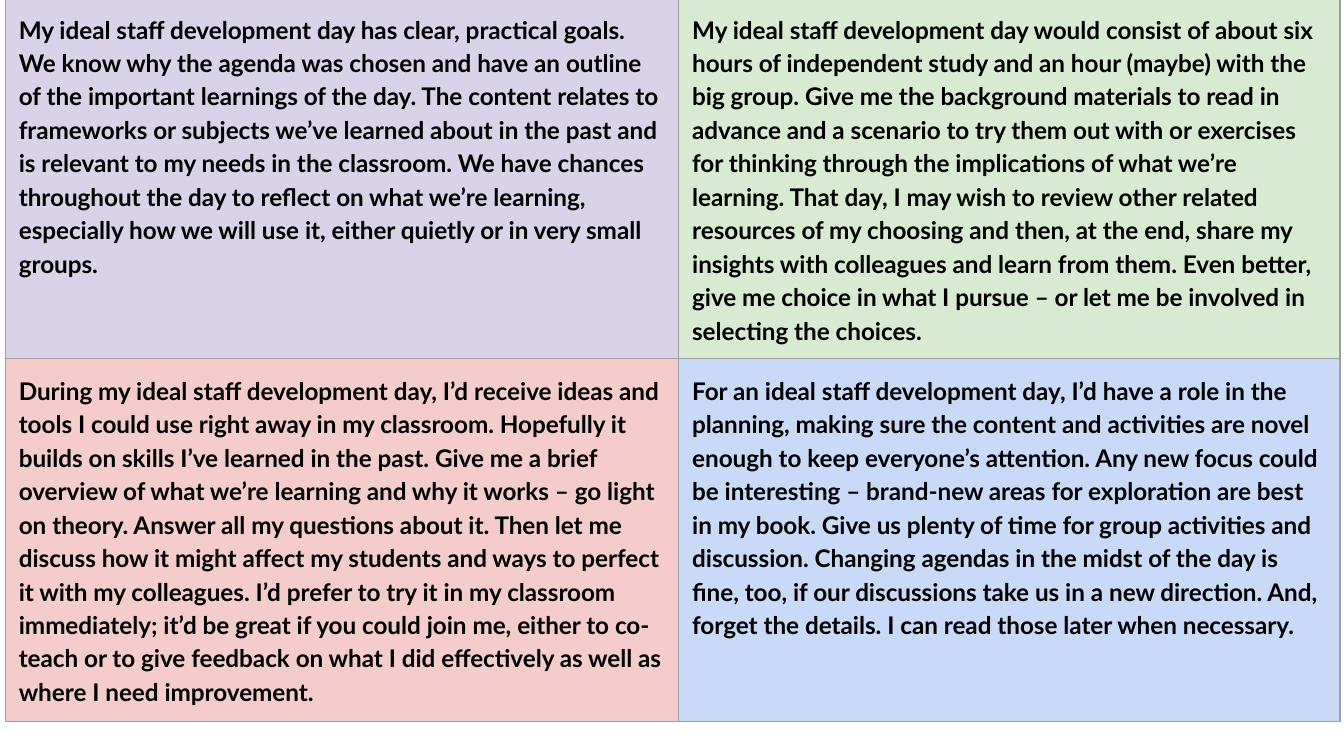
"""Build a slide with four descriptions of an ideal staff development day."""

from dataclasses import dataclass

from lxml import etree
from pptx import Presentation
from pptx import util as u
from pptx.dml.color import RGBColor
from pptx.oxml.ns import qn
from pptx.table import _Cell

SLIDE_WIDTH = 10
SLIDE_HEIGHT = SLIDE_WIDTH * 9 / 16
COLUMN_WIDTHS = (5.01, 4.92)
ROW_HEIGHTS = (2.68, 2.7)
MARGINS = {
    f"margin_{side}": u.Inches(0.1) for side in ("left", "right", "top", "bottom")
}
FONT_FORMAT = {"name": "Lato", "size": u.Pt(13), "bold": True}
BORDER_COLOR = "9E9E9E"


@dataclass(frozen=True)
class IdealDay:
    fill: str
    description: str


IDEAL_DAYS = (
    IdealDay(
        "D9D2E9",
        "My ideal staff development day has clear, practical goals. We know why the "
        "agenda was chosen and have an outline of the important learnings of the day. "
        "The content relates to frameworks or subjects we’ve learned about in the past "
        "and is relevant to my needs in the classroom. We have chances throughout the "
        "day to reflect on what we’re learning, especially how we will use it, either "
        "quietly or in very small groups.",
    ),
    IdealDay(
        "D9EAD3",
        "My ideal staff development day would consist of about six hours of independent "
        "study and an hour (maybe) with the big group. Give me the background materials "
        "to read in advance and a scenario to try them out with or exercises for "
        "thinking through the implications of what we’re learning. That day, I may wish "
        "to review other related resources of my choosing and then, at the end, share "
        "my insights with colleagues and learn from them. Even better, give me choice "
        "in what I pursue – or let me be involved in selecting the choices.",
    ),
    IdealDay(
        "F4CCCC",
        "During my ideal staff development day, I’d receive ideas and tools I could use "
        "right away in my classroom. Hopefully it builds on skills I’ve learned in the "
        "past. Give me a brief overview of what we’re learning and why it works – go "
        "light on theory. Answer all my questions about it. Then let me discuss how it "
        "might affect my students and ways to perfect it with my colleagues. I’d prefer "
        "to try it in my classroom immediately; it’d be great if you could join me, "
        "either to co-teach or to give feedback on what I did effectively as well as "
        "where I need improvement.",
    ),
    IdealDay(
        "C9DAF8",
        "For an ideal staff development day, I’d have a role in the planning, making "
        "sure the content and activities are novel enough to keep everyone’s attention. "
        "Any new focus could be interesting – brand-new areas for exploration are best "
        "in my book. Give us plenty of time for group activities and discussion. "
        "Changing agendas in the midst of the day is fine, too, if our discussions take "
        "us in a new direction. And, forget the details. I can read those later when "
        "necessary.",
    ),
)


def color(hex_value: str) -> RGBColor:
    return RGBColor.from_string(hex_value)


def apply_format(target: object, values: dict) -> None:
    for name, value in values.items():
        setattr(target, name, value)


def add_borders(cell: _Cell) -> None:
    properties = cell._tc.get_or_add_tcPr()
    for index, side in enumerate(("lnL", "lnR", "lnT", "lnB")):
        line = etree.Element(qn(f"a:{side}"), w=str(u.Pt(0.75)))
        fill = etree.SubElement(line, qn("a:solidFill"))
        etree.SubElement(fill, qn("a:srgbClr"), val=BORDER_COLOR)
        properties.insert(index, line)


def draw_ideal_day(cell: _Cell, day: IdealDay) -> None:
    apply_format(cell, MARGINS)
    cell.fill.solid()
    cell.fill.fore_color.rgb = color(day.fill)
    add_borders(cell)
    paragraph = cell.text_frame.paragraphs[0]
    paragraph.line_spacing = 1.15
    run = paragraph.add_run()
    run.text = day.description
    apply_format(run.font, FONT_FORMAT)
    run.font.color.rgb = color("000000")


def main() -> None:
    presentation = Presentation()
    presentation.slide_width = u.Inches(SLIDE_WIDTH)
    presentation.slide_height = u.Inches(SLIDE_HEIGHT)
    slide = presentation.slides.add_slide(presentation.slide_layouts[6])
    table = slide.shapes.add_table(
        len(ROW_HEIGHTS),
        len(COLUMN_WIDTHS),
        u.Inches(0.04),
        u.Inches(-0.02),
        u.Inches(sum(COLUMN_WIDTHS)),
        u.Inches(sum(ROW_HEIGHTS)),
    ).table
    apply_format(table, {"first_row": False, "horz_banding": False})
    for column, width in zip(table.columns, COLUMN_WIDTHS):
        column.width = u.Inches(width)
    for row, height in zip(table.rows, ROW_HEIGHTS):
        row.height = u.Inches(height)
    for cell, day in zip(table.iter_cells(), IDEAL_DAYS):
        draw_ideal_day(cell, day)
    presentation.save("out.pptx")


if __name__ == "__main__":
    main()
